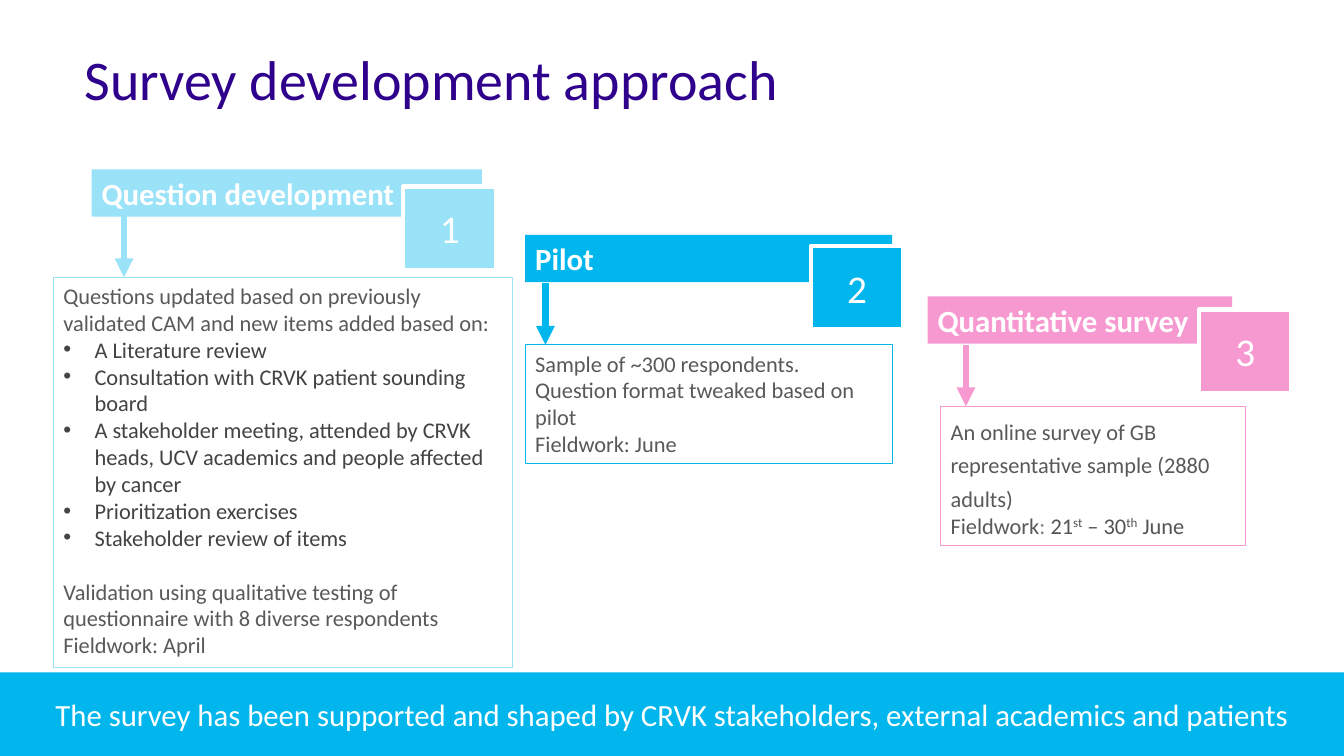
from lxml import etree
from pptx import Presentation
from pptx.dml.color import RGBColor
from pptx.enum.shapes import MSO_CONNECTOR as CONN, MSO_SHAPE as SHAPE
from pptx.enum.text import MSO_ANCHOR as ANCHOR, PP_ALIGN as ALIGN
from pptx.oxml.ns import qn
from pptx.util import Pt

PX = 9144  # 100 px to the inch
W, H = 1333, 750
COLORS = {
    "title": "2E008B", "white": "FFFFFF", "pale": "99E2F8", "cyan": "00B6ED",
    "pink": "F799D1", "body": "58595B", "bullet": "424344",
    "colon": "808080", "date": "535456",
}


def rgb(name):
    return RGBColor.from_string(COLORS[name])


def add_box(x, y, w, h, fill=None, line=None, width=0.75, anchor=ANCHOR.MIDDLE):
    """Add a rectangle without shadow, ready for wrapped text."""
    s = slide.shapes.add_shape(SHAPE.RECTANGLE, x * PX, y * PX, w * PX, h * PX)
    s.shadow.inherit = False
    if fill:
        s.fill.solid()
        s.fill.fore_color.rgb = rgb(fill)
    else:
        s.fill.background()
    if line:
        s.line.color.rgb = rgb(line)
        s.line.width = Pt(width)
    else:
        s.line.fill.background()
    s.text_frame.word_wrap = True
    s.text_frame.vertical_anchor = anchor
    return s


def write(tf, text, size=16, color="body", bold=False, align=ALIGN.LEFT,
          bullet=False, before=0, spacing=None):
    """Append a paragraph; text is a string or (text, color, baseline) runs."""
    p = tf.paragraphs[0]
    if p.runs:
        p = tf.add_paragraph()
    p.alignment = align
    if before:
        p.space_before = Pt(before)
    if spacing:
        p.line_spacing = spacing
    if bullet:
        pPr = p._p.get_or_add_pPr()
        pPr.set("marL", str(31 * PX))
        pPr.set("indent", str(-31 * PX))
        etree.SubElement(pPr, qn("a:buFont")).set("typeface", "Arial")
        etree.SubElement(pPr, qn("a:buChar")).set("char", "•")
    runs = [(text, color, 0)] if isinstance(text, str) else text
    for content, run_color, baseline in runs:
        r = p.add_run()
        r.text = content
        r.font.name = "Calibri"
        r.font.size = Pt(size)
        r.font.bold = bold
        r.font.color.rgb = rgb(run_color)
        if baseline:
            r._r.get_or_add_rPr().set("baseline", str(baseline * 1000))


prs = Presentation()
prs.slide_width, prs.slide_height = W * PX, H * PX
slide = prs.slides.add_slide(prs.slide_layouts[6])

title = slide.shapes.add_textbox(84 * PX, 52 * PX, 1166 * PX, 61 * PX)
tf = title.text_frame
tf.word_wrap = True
tf.margin_left = tf.margin_right = tf.margin_top = tf.margin_bottom = 0
write(tf, "Survey development approach", size=40, color="title", spacing=0.9)

bullet = {"color": "bullet", "bullet": True}
question_text = [
    ("Questions updated based on previously validated CAM and new items added based on:", {}),
    ("A Literature review", bullet),
    ("Consultation with CRVK patient sounding board", bullet),
    ("A stakeholder meeting, attended by CRVK heads, UCV academics and people affected by cancer", bullet),
    ("Prioritization exercises", bullet),
    ("Stakeholder review of items", bullet),
    ("Validation using qualitative testing of questionnaire with 8 diverse respondents",
     {"before": 19.2}),
    ("Fieldwork: April", {}),
]
pilot_text = [
    ("Sample of ~300 respondents.", {}),
    ("Question format tweaked based on pilot", {}),
    ("Fieldwork: June", {}),
]
survey_text = [
    ("An online survey of GB representative sample (2880 adults)",
     {"spacing": Pt(24), "before": 16}),
    ([("Fieldwork", "body", 0), (": ", "colon", 0), ("21", "date", 0),
      ("st", "date", 30), (" – 30", "date", 0), ("th", "date", 30),
      (" June", "date", 0)], {}),
]

# heading, color, heading x/y/w, arrow x, badge x/y, body x/y/w/h, body text
stages = [
    ("Question development", "pale", (91, 168, 387), 123, (400, 185),
     (53, 275, 455, 387), question_text),
    ("Pilot", "cyan", (521, 233, 364), 541, (804, 244),
     (521, 342, 364, 118), pilot_text),
    ("Quantitative survey", "pink", (920, 294, 302), 958, (1189, 307),
     (933, 403, 302, 138), survey_text),
]
HEADING_H, ARROW_H, BADGE_W, BADGE_H = 47, 61, 92, 83

for number, stage in enumerate(stages, 1):
    heading, color, heading_at, arrow_x, badge_at, body_at, paragraphs = stage
    s = add_box(*heading_at, HEADING_H, fill=color)
    write(s.text_frame, heading, size=22, color="white", bold=True)

    body_y = body_at[1]
    arrow = slide.shapes.add_connector(
        CONN.STRAIGHT, arrow_x * PX, (body_y - ARROW_H) * PX, arrow_x * PX, body_y * PX)
    arrow.line.color.rgb = rgb(color)
    arrow.line.width = Pt(4.5)
    etree.SubElement(arrow.line._get_or_add_ln(), qn("a:tailEnd")).set("type", "triangle")
    etree.SubElement(arrow._element.spPr, qn("a:effectLst"))

    s = add_box(*body_at, line=color, anchor=ANCHOR.TOP)
    for text, fmt in paragraphs:
        write(s.text_frame, text, **fmt)

    s = add_box(*badge_at, BADGE_W, BADGE_H, fill=color, line="white", width=3)
    write(s.text_frame, str(number), size=28, color="white", align=ALIGN.CENTER)

banner = add_box(0, 667, W, 83, fill="cyan")
write(banner.text_frame,
      "The survey has been supported and shaped by CRVK stakeholders, external academics and patients",
      size=22, color="white", align=ALIGN.CENTER)

prs.save("out.pptx")
